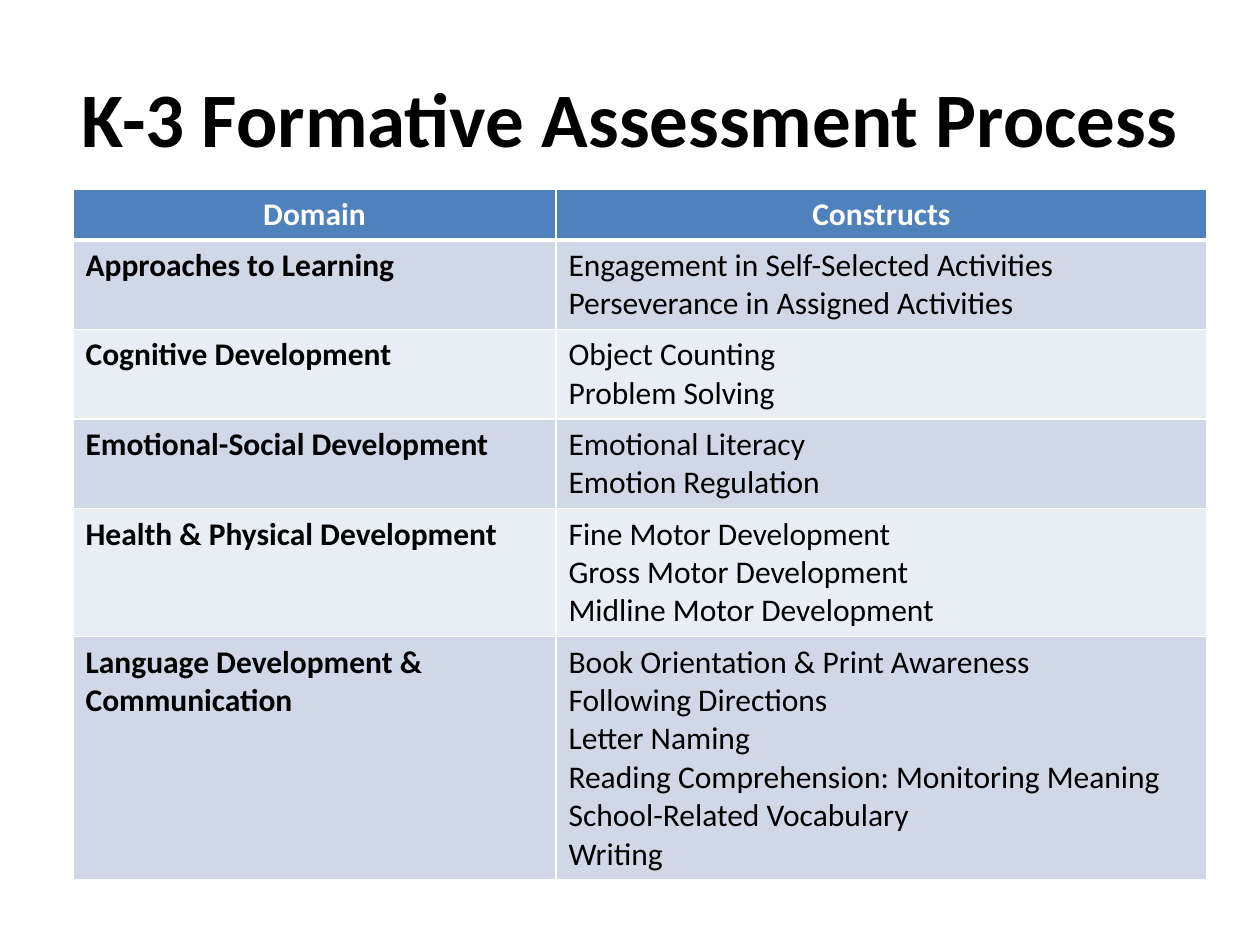
from dataclasses import dataclass

from lxml.etree import SubElement
from pptx import Presentation
from pptx.dml.color import RGBColor
from pptx.enum.text import MSO_ANCHOR as Anchor, PP_ALIGN as Align
from pptx.oxml.ns import qn
from pptx.util import Emu, Pt

PX = 914400 / 126
FONT = "Calibri"
WHITE = RGBColor(0xFF, 0xFF, 0xFF)
BLACK = RGBColor(0x00, 0x00, 0x00)
BLUE = RGBColor(0x4F, 0x81, 0xBD)
BANDS = (RGBColor(0xD0, 0xD8, 0xE8), RGBColor(0xE9, 0xED, 0xF4))

COLUMN_WIDTHS = (483, 651)
LINE_HEIGHT, CELL_PADDING = 38, 13


@dataclass(frozen=True)
class Domain:
    name: str
    constructs: tuple[str, ...]


DOMAINS = (
    Domain("Approaches to Learning",
           ("Engagement in Self-Selected Activities",
            "Perseverance in Assigned Activities")),
    Domain("Cognitive Development", ("Object Counting", "Problem Solving")),
    Domain("Emotional-Social Development",
           ("Emotional Literacy", "Emotion Regulation")),
    Domain("Health & Physical Development",
           ("Fine Motor Development", "Gross Motor Development",
            "Midline Motor Development")),
    Domain("Language Development & Communication",
           ("Book Orientation & Print Awareness", "Following Directions",
            "Letter Naming", "Reading Comprehension: Monitoring Meaning",
            "School-Related Vocabulary", "Writing")),
)


def px(length: int) -> Emu:
    return Emu(round(length * PX))


def write_lines(frame, lines: tuple[str, ...], size: int, color: RGBColor,
                bold: bool, align: Align) -> None:
    for index, line in enumerate(lines):
        para = frame.add_paragraph() if index else frame.paragraphs[0]
        para.alignment = align
        span = para.add_run()
        span.text = line
        span.font.name, span.font.size = FONT, Pt(size)
        span.font.bold, span.font.color.rgb = bold, color


def draw_borders(cell, top: int, bottom: int) -> None:
    properties = cell._tc.get_or_add_tcPr()
    for side, width in (("L", 1), ("R", 1), ("T", top), ("B", bottom)):
        line = SubElement(properties, qn(f"a:ln{side}"), w=str(Pt(width)))
        fill = SubElement(line, qn("a:solidFill"))
        SubElement(fill, qn("a:srgbClr"), val=str(WHITE))


def draw_cell(cell, lines: tuple[str, ...], row: int, bold: bool) -> None:
    header = row == 0
    draw_borders(cell, top=3 if row == 1 else 1, bottom=3 if header else 1)
    cell.fill.solid()
    cell.fill.fore_color.rgb = BLUE if header else BANDS[(row - 1) % 2]
    write_lines(cell.text_frame, lines, 18, WHITE if header else BLACK,
                bold, Align.CENTER if header else Align.LEFT)


def draw_title(slide, text: str) -> None:
    title = slide.shapes.title
    title.left, title.top, title.width, title.height = map(px, (63, 38, 1134, 157))
    title.text_frame.vertical_anchor = Anchor.MIDDLE
    write_lines(title.text_frame, (text,), 44, BLACK, True, Align.CENTER)


def draw_table(slide) -> None:
    rows = (Domain("Domain", ("Constructs",)), *DOMAINS)
    heights = [len(row.constructs) * LINE_HEIGHT + CELL_PADDING for row in rows]
    table = slide.shapes.add_table(
        len(rows), len(COLUMN_WIDTHS), px(73), px(189),
        px(sum(COLUMN_WIDTHS)), px(sum(heights))).table
    for column, width in zip(table.columns, COLUMN_WIDTHS):
        column.width = px(width)
    for index, (row, height) in enumerate(zip(rows, heights)):
        table.rows[index].height = px(height)
        draw_cell(table.cell(index, 0), (row.name,), index, bold=True)
        draw_cell(table.cell(index, 1), row.constructs, index, bold=index == 0)


def main() -> None:
    deck = Presentation()
    deck.slide_width, deck.slide_height = px(1260), px(945)
    page = deck.slides.add_slide(deck.slide_layouts.get_by_name("Title Only"))
    # Heading
    draw_title(page, "K-3 Formative Assessment Process")
    # Domains and their constructs
    draw_table(page)
    deck.save("out.pptx")


if __name__ == "__main__":
    main()
